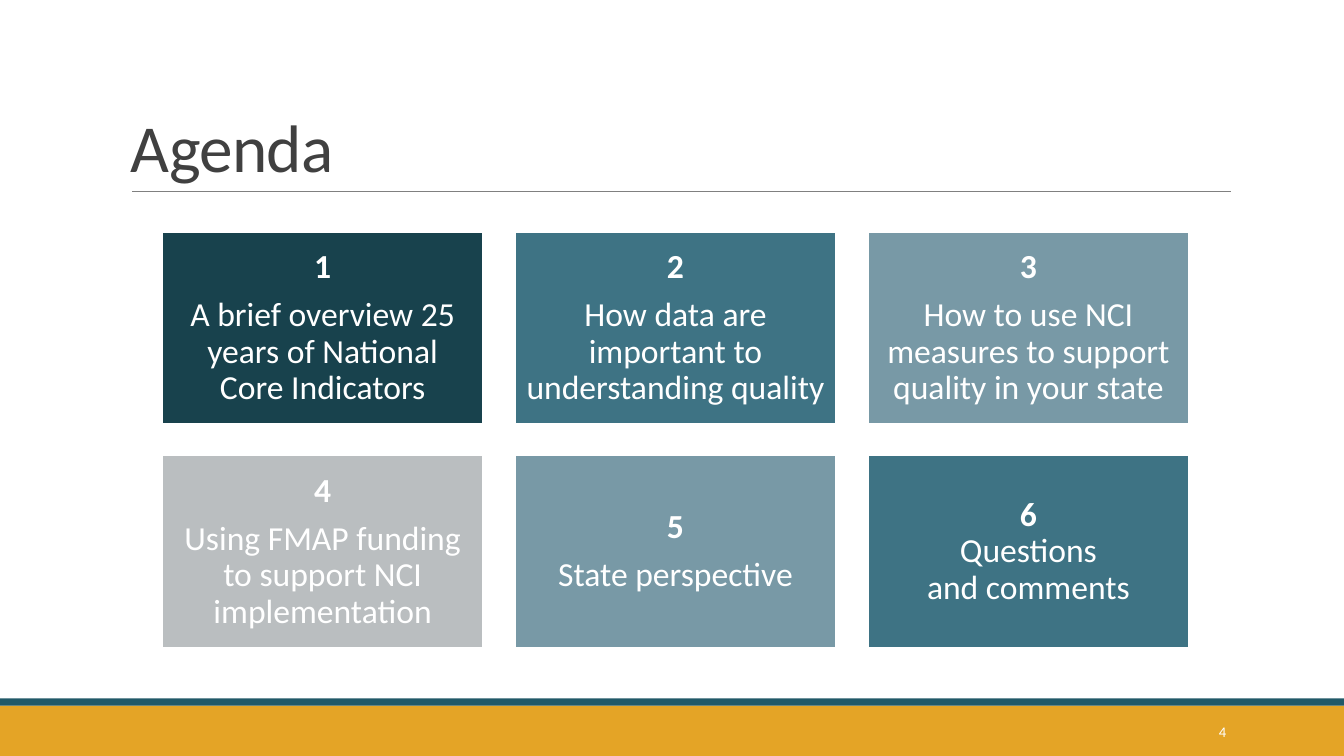
from lxml.etree import SubElement
from pptx import Presentation
from pptx.dml.color import RGBColor
from pptx.enum.shapes import MSO_CONNECTOR as Connector, MSO_SHAPE as Shape
from pptx.enum.text import MSO_ANCHOR as Anchor, PP_ALIGN as Align
from pptx.oxml.ns import qn
from pptx.util import Inches, Pt

WHITE = RGBColor(0xFF, 0xFF, 0xFF)
GOLD = RGBColor(0xE4, 0xA4, 0x26)
TEAL = RGBColor(0x21, 0x59, 0x68)
RULE_GRAY = RGBColor(0x80, 0x80, 0x80)
TITLE_GRAY = RGBColor(0x40, 0x40, 0x40)
NAVY = RGBColor(0x18, 0x42, 0x4D)
BLUE = RGBColor(0x3E, 0x73, 0x84)
MIST = RGBColor(0x78, 0x99, 0xA6)
SILVER = RGBColor(0xBA, 0xBE, 0xC0)

FONT = "Calibri"
SLIDE_WIDTH, SLIDE_HEIGHT = 13.33, 7.5
COLUMNS = 3
GRID_LEFT, GRID_TOP = 1.61, 2.3
COLUMN_STEP, ROW_STEP = 3.5, 2.22
TILE_WIDTH, TILE_HEIGHT = 3.18, 1.91

AGENDA = [
    (NAVY, ["1", "A brief overview 25 years of National Core Indicators"]),
    (BLUE, ["2", "How data are important to understanding quality"]),
    (MIST, ["3", "How to use NCI measures to support quality in your state"]),
    (SILVER, ["4", "Using FMAP funding to support NCI implementation"]),
    (MIST, ["5", "State perspective"]),
    (BLUE, ["6\vQuestions\vand comments"]),
]


def style_font(font, size, color, bold=False):
    """Apply the deck's typeface with a size, colour and weight."""
    font.name = FONT
    font.size = Pt(size)
    font.color.rgb = color
    font.bold = bold


def add_block(slide, left, top, width, height, color):
    """Draw a plain filled rectangle and return it."""
    block = slide.shapes.add_shape(
        Shape.RECTANGLE, Inches(left), Inches(top), Inches(width), Inches(height))
    block.shadow.inherit = False
    block.fill.solid()
    block.fill.fore_color.rgb = color
    block.line.fill.background()
    return block


def add_rule(slide, left, right, top):
    """Draw the thin line under the title."""
    rule = slide.shapes.add_connector(
        Connector.STRAIGHT, Inches(left), Inches(top), Inches(right), Inches(top))
    rule.line.color.rgb = RULE_GRAY
    rule.line.width = Pt(0.5)
    SubElement(rule._element.spPr, qn("a:effectLst"))


def add_label(slide, left, top, width, height, text, size, color, anchor):
    """Add a one-line text box and return its paragraph."""
    label = slide.shapes.add_textbox(
        Inches(left), Inches(top), Inches(width), Inches(height))
    frame = label.text_frame
    frame.word_wrap = True
    frame.vertical_anchor = anchor
    frame.text = text
    paragraph = frame.paragraphs[0]
    style_font(paragraph.runs[0].font, size, color)
    return paragraph


def add_tile(slide, index, color, lines):
    """Place an agenda tile on the grid, with its number in bold."""
    row, column = divmod(index, COLUMNS)
    tile = add_block(slide, GRID_LEFT + column * COLUMN_STEP,
                     GRID_TOP + row * ROW_STEP, TILE_WIDTH, TILE_HEIGHT, color)
    tile.line.color.rgb = WHITE
    tile.line.width = Pt(1.25)
    frame = tile.text_frame
    frame.word_wrap = True
    frame.vertical_anchor = Anchor.MIDDLE
    frame.margin_left = frame.margin_right = Inches(0.1)
    frame.margin_top = frame.margin_bottom = Inches(0.1)
    for position, line in enumerate(lines):
        paragraph = frame.add_paragraph() if position else frame.paragraphs[0]
        paragraph.text = line
        paragraph.alignment = Align.CENTER
        paragraph.line_spacing = 0.9
        paragraph.space_after = Pt(8.4)
        style_font(paragraph.font, 24, WHITE)
        for run in paragraph.runs:
            style_font(run.font, 24, WHITE)
    frame.paragraphs[0].runs[0].font.bold = True


def main():
    """Build the agenda slide and save it."""
    presentation = Presentation()
    presentation.slide_width = Inches(SLIDE_WIDTH)
    presentation.slide_height = Inches(SLIDE_HEIGHT)
    slide = presentation.slides.add_slide(presentation.slide_layouts[6])

    add_block(slide, 0, 7, SLIDE_WIDTH, 0.5, GOLD)
    add_block(slide, 0, 6.93, SLIDE_WIDTH, 0.07, TEAL)
    add_rule(slide, 1.31, 12.21, 1.9)

    title = add_label(slide, 1.2, 0.31, 11, 1.59, "Agenda", 48, TITLE_GRAY, Anchor.BOTTOM)
    title.line_spacing = 0.85
    title.runs[0].font._element.set("spc", "-50")
    number = add_label(slide, 10.83, 7.06, 1.43, 0.4, "4", 10.5, WHITE, Anchor.MIDDLE)
    number.alignment = Align.RIGHT
    number.space_after = Pt(6)

    for index, (color, lines) in enumerate(AGENDA):
        add_tile(slide, index, color, lines)

    presentation.save("out.pptx")


if __name__ == "__main__":
    main()
